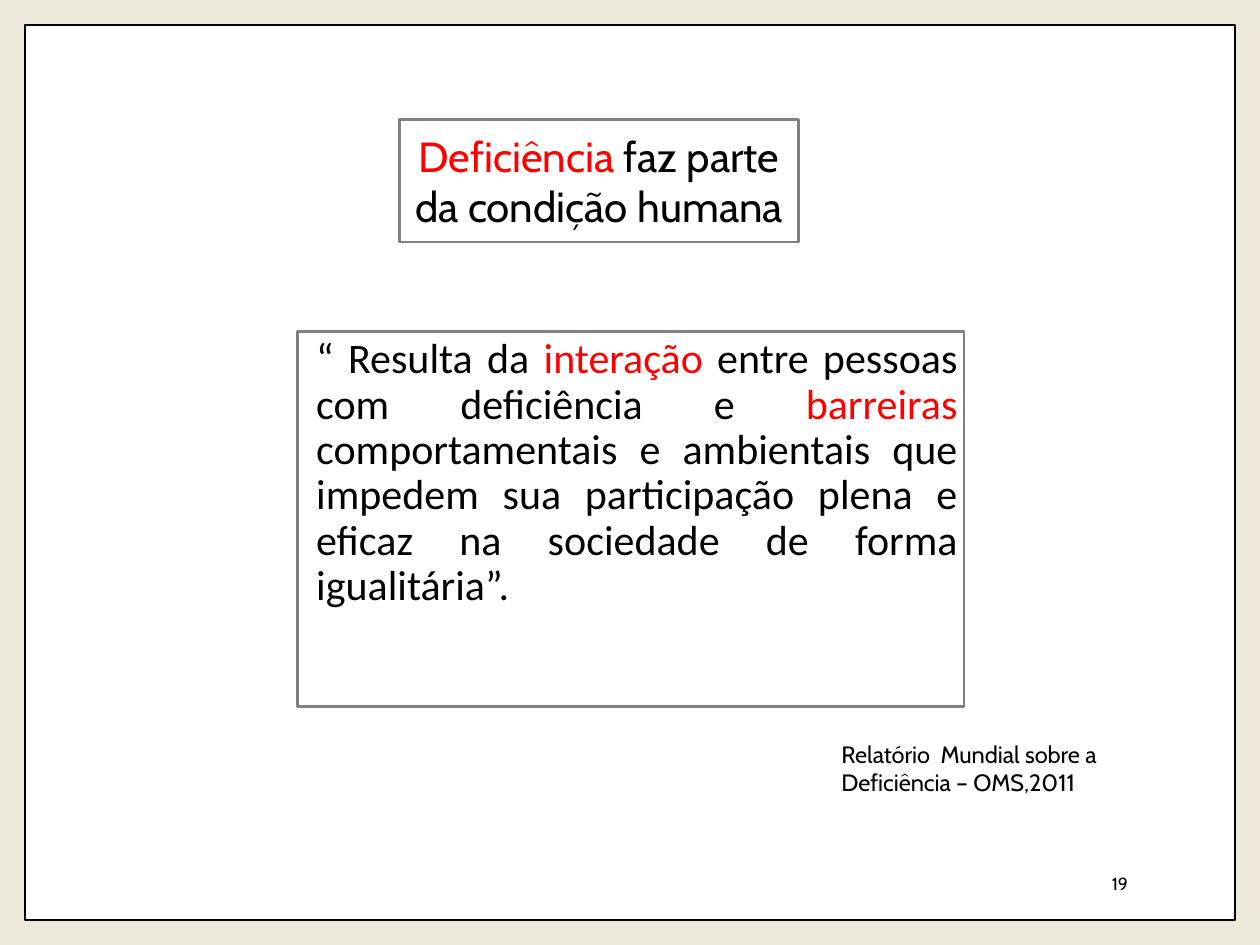
from pptx import Presentation
from pptx import util as u
from pptx.dml.color import RGBColor
from pptx.enum import shapes, text

BEIGE = RGBColor(0xEC, 0xE9, 0xDB)
WHITE = RGBColor(0xFF, 0xFF, 0xFF)
BLACK = RGBColor(0, 0, 0)
GRAY = RGBColor(0x80, 0x80, 0x80)
RED = RGBColor(0xFF, 0, 0)

# Runs are (text, colour)
TITLE = [("Deficiência", RED), (" faz parte da condição humana", BLACK)]
QUOTE = [
    ("“ Resulta da ", BLACK),
    ("interação", RED),
    (" entre pessoas com deficiência e ", BLACK),
    ("barreiras", RED),
    (" comportamentais e ambientais que impedem sua participação plena e "
     "eficaz na sociedade de forma igualitária”.", BLACK),
]
SOURCE = [("Relatório  Mundial sobre a Deficiência – OMS,2011", BLACK)]
PAGE = [("19", BLACK)]


def add_frame(s, box, line, width, fill=None):
    sp = s.shapes.add_shape(shapes.MSO_SHAPE.RECTANGLE, *map(u.Inches, box))
    sp.shadow.inherit = False
    if fill is None:
        sp.fill.background()
    else:
        sp.fill.solid()
        sp.fill.fore_color.rgb = fill
    sp.line.color.rgb = line
    sp.line.width = u.Pt(width)
    return sp


def add_label(s, box):
    return s.shapes.add_textbox(*map(u.Inches, box))


def set_text(sp, runs, size, font="Cabin", align=text.PP_ALIGN.LEFT,
             anchor=text.MSO_ANCHOR.TOP, insets=(0.1, 0.05, 0.1, 0.05),
             spacing=None):
    tf = sp.text_frame
    tf.word_wrap = True
    tf.vertical_anchor = anchor
    (tf.margin_left, tf.margin_top,
     tf.margin_right, tf.margin_bottom) = map(u.Inches, insets)
    p = tf.paragraphs[0]
    p.alignment = align
    p.line_spacing = spacing
    for words, color in runs:
        r = p.add_run()
        r.text = words
        r.font.size = u.Pt(size)
        r.font.name = font
        r.font.color.rgb = color


def main():
    prs = Presentation()
    prs.slide_width, prs.slide_height = u.Inches(10), u.Inches(7.5)
    s = prs.slides.add_slide(prs.slide_layouts[6])
    s.background.fill.solid()
    s.background.fill.fore_color.rgb = BEIGE

    add_frame(s, (0.2, 0.2, 9.6, 7.1), BLACK, 1, fill=WHITE)
    set_text(add_label(s, (6.58, 5.82, 2.31, 0.56)), SOURCE, 13.5)
    set_text(add_frame(s, (3.17, 0.95, 3.17, 0.97), GRAY, 1.5), TITLE, 24,
             align=text.PP_ALIGN.CENTER, anchor=text.MSO_ANCHOR.MIDDLE)
    set_text(add_label(s, (7.65, 6.81, 1.4, 0.4)), PAGE, 10,
             align=text.PP_ALIGN.RIGHT, anchor=text.MSO_ANCHOR.MIDDLE)
    set_text(add_frame(s, (2.36, 2.63, 5.29, 2.98), GRAY, 1.5), QUOTE, 24,
             font="Calibri", align=text.PP_ALIGN.JUSTIFY,
             insets=(0.15, 0.05, 0.05, 0.05), spacing=0.9)

    prs.save("out.pptx")


if __name__ == "__main__":
    main()
